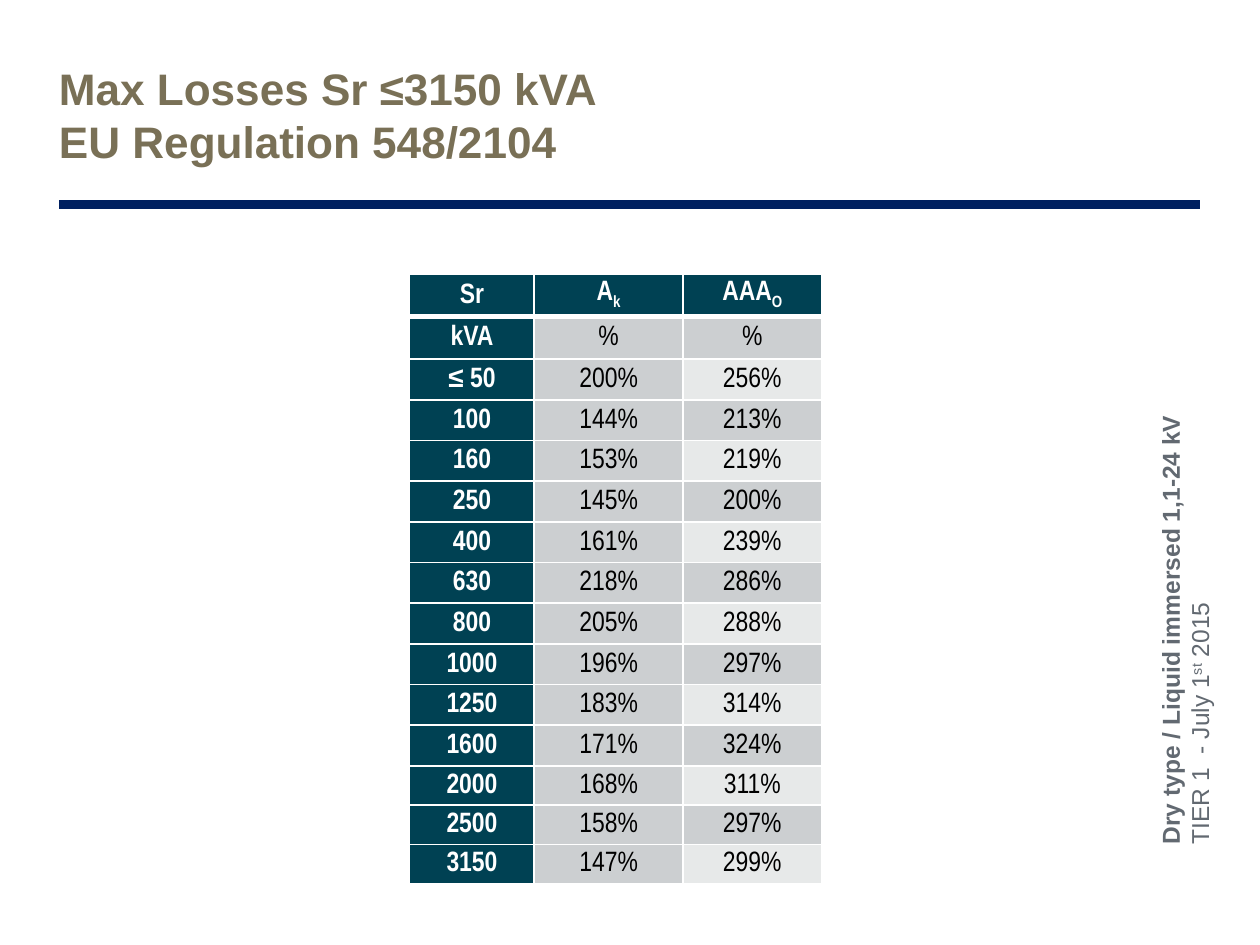
from dataclasses import dataclass

from lxml import etree
from pptx import Presentation
from pptx.dml.color import RGBColor
from pptx.enum.shapes import MSO_CONNECTOR
from pptx.enum.text import MSO_ANCHOR, PP_ALIGN
from pptx.oxml.ns import qn
from pptx.util import Cm, Pt

STRAIGHT = MSO_CONNECTOR.STRAIGHT
TOP = MSO_ANCHOR.TOP
MIDDLE = MSO_ANCHOR.MIDDLE
CENTER = PP_ALIGN.CENTER


@dataclass(frozen=True)
class Theme:
    title: str = "797056"
    rule: str = "002060"
    heading: str = "004153"
    band_dark: str = "CCCFD1"
    band_light: str = "E7E9E9"
    white: str = "FFFFFF"
    black: str = "000000"
    note: str = "626971"
    text_font: str = "Arial"
    table_font: str = "Arial Narrow"
    title_size: float = 25.2
    table_size: float = 16
    note_size: float = 14


THEME = Theme()

TITLE = "Max Losses Sr ≤3150 kVA\vEU Regulation 548/2104"
NOTE_HEADING = "Dry type / Liquid immersed 1,1-24 kV"
NOTE_DATE = (("TIER 1  - July 1", 0), ("st", 30), (" 2015", 0))
SUBSCRIPT = -25
HEADINGS = (
    (("Sr", 0),),
    (("A", 0), ("k", SUBSCRIPT)),
    (("AAA", 0), ("O", SUBSCRIPT)),
)
LOSSES = (
    ("kVA", "%", "%"),
    ("≤ 50", "200%", "256%"),
    ("100", "144%", "213%"),
    ("160", "153%", "219%"),
    ("250", "145%", "200%"),
    ("400", "161%", "239%"),
    ("630", "218%", "286%"),
    ("800", "205%", "288%"),
    ("1000", "196%", "297%"),
    ("1250", "183%", "314%"),
    ("1600", "171%", "324%"),
    ("2000", "168%", "311%"),
    ("2500", "158%", "297%"),
    ("3150", "147%", "299%"),
)
COLUMN_WIDTHS = (2.51, 3.0, 2.79)
ROW_HEIGHTS = (0.86,) * 2 + (0.82,) * 10 + (0.79,) * 3


def style(font, name, size, color, bold=False):
    font.name = name
    font.size = Pt(size)
    font.bold = bold
    font.color.rgb = RGBColor.from_string(color)


def add_spans(para, spans):
    for text, baseline in spans:
        span = para.add_run()
        span.text = text
        if baseline:
            span.font._element.set("baseline", str(baseline * 1000))


def add_text_box(page, left, top, width, height, anchor):
    box = page.shapes.add_textbox(Cm(left), Cm(top), Cm(width), Cm(height))
    frame = box.text_frame
    frame.word_wrap = True
    frame.vertical_anchor = anchor
    frame.margin_left = frame.margin_right = 0
    frame.margin_top = frame.margin_bottom = 0
    return box


def add_header(page, left, top, width, height):
    rule_y = Cm(top + height)
    rule = page.shapes.add_connector(
        STRAIGHT, Cm(left), rule_y, Cm(left + width), rule_y
    )
    rule.line.color.rgb = RGBColor.from_string(THEME.rule)
    rule.line.width = Pt(5)
    etree.SubElement(rule._element.spPr, qn("a:effectLst"))

    box = add_text_box(page, left, top, width - 3.1, height - 0.64, MIDDLE)
    para = box.text_frame.paragraphs[0]
    para.text = TITLE
    style(para.font, THEME.text_font, THEME.title_size, THEME.title, True)


def add_border(cell, side, points):
    properties = cell._tc.get_or_add_tcPr()
    line = etree.SubElement(properties, qn(f"a:ln{side}"), w=str(Pt(points)))
    fill = etree.SubElement(line, qn("a:solidFill"))
    etree.SubElement(fill, qn("a:srgbClr"), val=THEME.white)


def cell_fill(row, column):
    if row == 0 or column == 0:
        return THEME.heading
    if column == 2 and row % 2 == 0:
        return THEME.band_light
    return THEME.band_dark


def fill_cell(cell, row, column, spans):
    cell.margin_left = cell.margin_right = cell.margin_top = Cm(0.03)
    cell.margin_bottom = 0
    cell.vertical_anchor = MIDDLE
    for side in "LRTB":
        under_heading = (row, side) in ((0, "B"), (1, "T"))
        add_border(cell, side, 3 if under_heading else 1)
    cell.fill.solid()
    cell.fill.fore_color.rgb = RGBColor.from_string(cell_fill(row, column))

    is_heading = row == 0 or column == 0
    color = THEME.white if is_heading else THEME.black
    para = cell.text_frame.paragraphs[0]
    para.alignment = CENTER
    add_spans(para, spans)
    style(para.font, THEME.table_font, THEME.table_size, color, is_heading)


def add_losses_table(page, left, top):
    rows = [HEADINGS] + [[((text, 0),) for text in row] for row in LOSSES]
    table = page.shapes.add_table(
        len(rows), len(COLUMN_WIDTHS), Cm(left), Cm(top),
        Cm(sum(COLUMN_WIDTHS)), Cm(sum(ROW_HEIGHTS)),
    ).table
    table.first_col = True
    table.horz_banding = False
    for column, width in zip(table.columns, COLUMN_WIDTHS):
        column.width = Cm(width)
    for row, height in zip(table.rows, ROW_HEIGHTS):
        row.height = Cm(height)
    for row, cells in enumerate(rows):
        for column, spans in enumerate(cells):
            fill_cell(table.cell(row, column), row, column, spans)


def add_side_note(page, left, top, width, height):
    box = add_text_box(
        page, left + (width - height) / 2, top + (height - width) / 2,
        height, width, TOP,
    )
    box.rotation = 270
    para = box.text_frame.paragraphs[0]
    heading = para.add_run()
    heading.text = NOTE_HEADING
    heading.font.bold = True
    para.add_line_break()
    add_spans(para, NOTE_DATE)
    style(para.font, THEME.text_font, THEME.note_size, THEME.note)


def main():
    deck = Presentation()
    deck.slide_width = Cm(25.4)
    deck.slide_height = Cm(19.05)
    page = deck.slides.add_slide(deck.slide_layouts[6])
    add_header(page, 1.19, 1.12, 23.01, 3.0)
    add_losses_table(page, 8.26, 5.52)
    add_side_note(page, 23.29, 7.62, 1.47, 9.4)
    deck.save("out.pptx")


if __name__ == "__main__":
    main()
